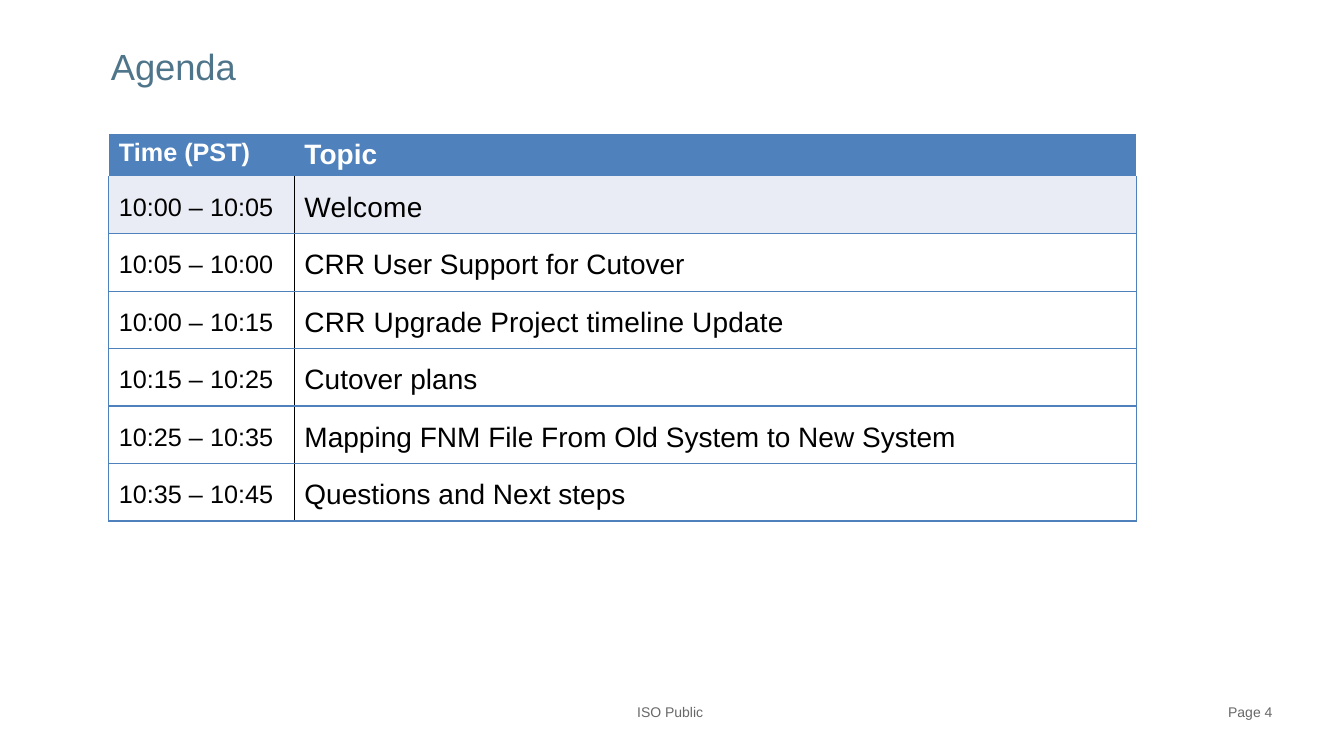
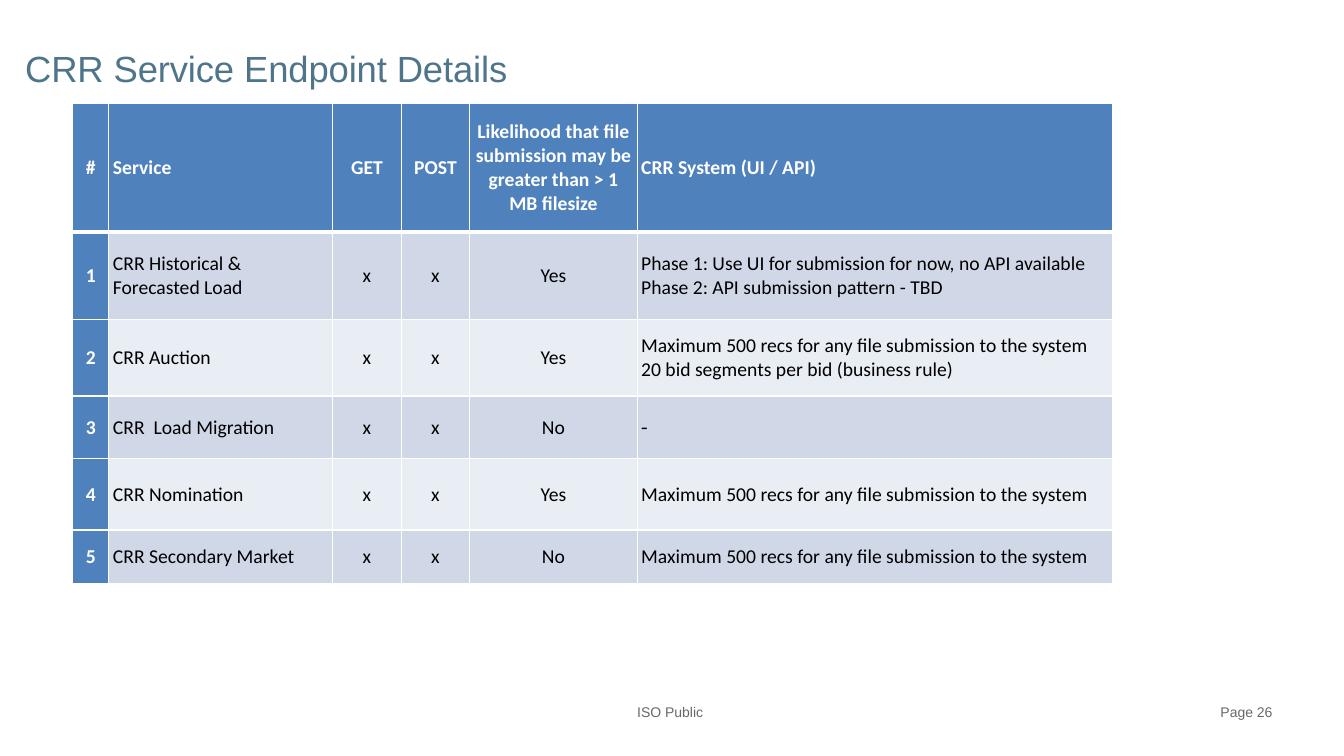
from lxml import etree
from pptx import Presentation
from pptx import util as u
from pptx.dml.color import RGBColor
from pptx.enum import text
from pptx.oxml import ns

WHITE = RGBColor(0xFF, 0xFF, 0xFF)
BLACK = RGBColor(0x00, 0x00, 0x00)
TITLE_COLOR = RGBColor(0x4F, 0x75, 0x8A)
FOOTER_COLOR = RGBColor(0x68, 0x68, 0x68)
AGENDA_BLUE = RGBColor(0x4F, 0x81, 0xBC)
AGENDA_TINT = RGBColor(0xE9, 0xEC, 0xF4)
SERVICE_BLUE = RGBColor(0x4F, 0x81, 0xBD)
SERVICE_BANDS = (RGBColor(0xD0, 0xD8, 0xE8), RGBColor(0xE9, 0xED, 0xF4))
PLAIN_TABLE_STYLE = "{2D5ABB26-0587-4C30-8999-92F81FD0307C}"
LEFT, CENTER, RIGHT = text.PP_ALIGN.LEFT, text.PP_ALIGN.CENTER, text.PP_ALIGN.RIGHT
TOP, MIDDLE = text.MSO_ANCHOR.TOP, text.MSO_ANCHOR.MIDDLE

AGENDA = [
    ("10:00 – 10:05", "Welcome", 0.2),
    ("10:05 – 10:00", "CRR User Support for Cutover", 0),
    ("10:00 – 10:15", "CRR Upgrade Project timeline Update", 0.1),
    ("10:15 – 10:25", "Cutover plans", 0),
    ("10:25 – 10:35", "Mapping FNM File From Old System to New System", 0),
    ("10:35 – 10:45", "Questions and Next steps", 0),
]

RECORD_LIMIT = "Maximum 500 recs for any file submission to the system"
SERVICE_HEADER = (
    "#", "Service", "GET", "POST",
    "Likelihood that file submission may be greater than > 1 MB filesize",
    "CRR System (UI / API)",
)
SERVICES = [
    ("CRR Historical & Forecasted Load", "Yes",
     "Phase 1: Use UI for submission for now, no API available\n"
     "Phase 2: API submission pattern - TBD"),
    ("CRR Auction", "Yes", RECORD_LIMIT + "\n20 bid segments per bid (business rule)"),
    ("CRR  Load Migration", "No", "-"),
    ("CRR Nomination", "Yes", RECORD_LIMIT),
    ("CRR Secondary Market", "No", RECORD_LIMIT),
]


def write_text(frame, words, size, color, font="Arial", bold=False, align=LEFT, tracking=0):
    """Write one paragraph per line of words into a text frame."""
    for index, line in enumerate(words.split("\n")):
        para = frame.add_paragraph() if index else frame.paragraphs[0]
        para.alignment = align
        span = para.add_run()
        span.text = line
        span.font.size = u.Pt(size)
        span.font.name = font
        span.font.bold = bold
        span.font.color.rgb = color
        if tracking:
            span._r.get_or_add_rPr().set("spc", str(round(tracking * 100)))


def set_margins(holder, left=0, top=0, right=0, bottom=0):
    """Set the inner margins of a cell or text frame in inches."""
    holder.margin_left, holder.margin_top = u.Inches(left), u.Inches(top)
    holder.margin_right, holder.margin_bottom = u.Inches(right), u.Inches(bottom)


def set_borders(cell, **borders):
    """Draw the given (colour, points) borders and hide the other sides."""
    properties = cell._tc.get_or_add_tcPr()
    for index, side in enumerate("LRTB"):
        line = etree.Element(ns.qn("a:ln" + side))
        if side in borders:
            color, width = borders[side]
            line.set("w", str(u.Pt(width)))
            fill = etree.SubElement(line, ns.qn("a:solidFill"))
            etree.SubElement(fill, ns.qn("a:srgbClr")).set("val", str(color))
        else:
            line.set("w", "0")
            etree.SubElement(line, ns.qn("a:noFill"))
        properties.insert(index, line)


def fill_cell(cell, words, fill, anchor, margins, **style):
    """Fill a table cell with a colour and styled text."""
    if fill is None:
        cell.fill.background()
    else:
        cell.fill.solid()
        cell.fill.fore_color.rgb = fill
    cell.vertical_anchor = anchor
    set_margins(cell, **margins)
    write_text(cell.text_frame, words, **style)


def add_plain_table(page, left, top, widths, heights):
    """Add an unstyled table with the given column widths and row heights."""
    frame = page.shapes.add_table(
        len(heights), len(widths), u.Inches(left), u.Inches(top),
        u.Inches(sum(widths)), u.Inches(sum(heights)))
    table = frame.table
    table.first_row = table.horz_banding = False
    table._tbl.tblPr.find(ns.qn("a:tableStyleId")).text = PLAIN_TABLE_STYLE
    for column, width in zip(table.columns, widths):
        column.width = u.Inches(width)
    for row, height in zip(table.rows, heights):
        row.height = u.Inches(height)
    return table


def add_label(page, words, left, width, align):
    """Add a footer label."""
    box = page.shapes.add_textbox(u.Inches(left), u.Inches(6.98), u.Inches(width), u.Inches(0.18))
    box.text_frame.word_wrap = True
    set_margins(box.text_frame)
    write_text(box.text_frame, words, 10, FOOTER_COLOR, align=align)


def add_page(deck, title, left, top, width, number):
    """Add a page with its title and footer."""
    page = deck.slides.add_slide(deck.slide_layouts[5])
    box = page.shapes.title
    box.left, box.top = u.Inches(left), u.Inches(top)
    box.width, box.height = u.Inches(width), u.Inches(0.46)
    frame = box.text_frame
    frame.auto_size = text.MSO_AUTO_SIZE.NONE
    frame.vertical_anchor = TOP
    set_margins(frame, top=0.02)
    write_text(frame, title, 26, TITLE_COLOR, tracking=-0.1)
    add_label(page, "ISO Public", 6.32, 0.8, LEFT)
    add_label(page, f"Page {number}", 11.82, 0.8, RIGHT)
    return page


def add_agenda(page):
    """Add the table of times and topics."""
    table = add_plain_table(page, 1.08, 1.33, (1.84, 8.35), [0.42] + [0.57] * len(AGENDA))
    margins = {"left": 0.1, "top": 0.05}
    blue, black = (AGENDA_BLUE, 1), (BLACK, 1)
    for column, (words, size) in enumerate((("Time (PST)", 18), ("Topic", 20))):
        cell = table.cell(0, column)
        fill_cell(cell, words, AGENDA_BLUE, TOP, margins, size=size, color=WHITE, bold=True)
        set_borders(cell)
    for row, (time, topic, tracking) in enumerate(AGENDA, 1):
        fill = AGENDA_TINT if row == 1 else None
        edges = {"B": blue} if row == 1 else {"T": blue, "B": blue}
        time_cell, topic_cell = table.cell(row, 0), table.cell(row, 1)
        fill_cell(time_cell, time, fill, MIDDLE, margins, size=18, color=BLACK)
        fill_cell(topic_cell, topic, fill, MIDDLE, margins,
                  size=20, color=BLACK, tracking=tracking)
        set_borders(time_cell, L=blue, R=black, **edges)
        set_borders(topic_cell, L=black, R=blue, **edges)


def add_services(page):
    """Add the table of service endpoints."""
    table = add_plain_table(page, 0.72, 1.03, (0.36, 2.22, 0.68, 0.68, 1.66, 4.72),
                            (1.27, 0.87, 0.76, 0.62, 0.71, 0.53))
    rows = [SERVICE_HEADER]
    for number, (service, likelihood, system) in enumerate(SERVICES, 1):
        rows.append((str(number), service, "x", "x", likelihood, system))
    thin, thick = (WHITE, 1), (WHITE, 3)
    for row, entries in enumerate(rows):
        for column, words in enumerate(entries):
            heading = row == 0 or column == 0
            cell = table.cell(row, column)
            fill_cell(cell, words, SERVICE_BLUE if heading else SERVICE_BANDS[(row - 1) % 2],
                      MIDDLE, {"left": 0.04, "right": 0.04}, size=14,
                      font="Times New Roman" if words == "-" else "Calibri",
                      color=WHITE if heading else BLACK, bold=heading,
                      align=LEFT if column in (1, 5) else CENTER)
            set_borders(cell, L=thin, R=thin, T=thick if row == 1 else thin,
                        B=thick if row == 0 else thin)


def main():
    """Build and save the deck."""
    deck = Presentation()
    deck.slide_width, deck.slide_height = u.Inches(13.33), u.Inches(7.5)
    add_agenda(add_page(deck, "Agenda", 1.1, 0.42, 1.4, 4))
    add_services(add_page(deck, "CRR Service Endpoint Details", 0.25, 0.44, 6.58, 26))
    deck.save("out.pptx")


if __name__ == "__main__":
    main()
